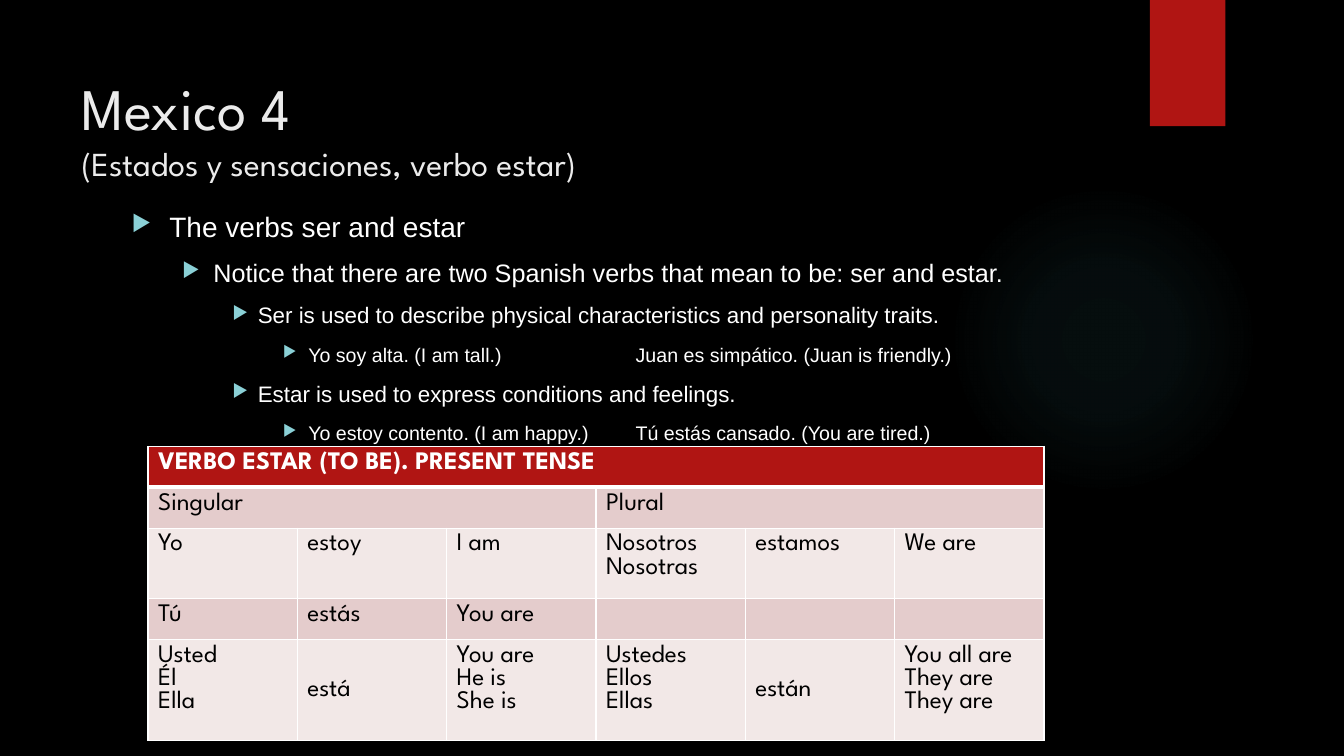
"""Build the slide about the Spanish verb estar, with its conjugation table."""
from pptx import Presentation
from pptx.dml.color import RGBColor
from pptx.enum.shapes import MSO_SHAPE
from pptx.enum.text import MSO_ANCHOR
from pptx.oxml import parse_xml
from pptx.oxml.ns import nsdecls
from pptx.util import Cm, Pt


def color(value):
    return RGBColor.from_string(value)


def add_xml(parent, tag, attributes="", content=""):
    parent.append(parse_xml(f"<a:{tag} {nsdecls('a')} {attributes}>{content}</a:{tag}>"))


presentation = Presentation()
presentation.slide_width = Cm(33.87)
presentation.slide_height = Cm(19.05)
slide = presentation.slides.add_slide(presentation.slide_layouts[6])
slide.background.fill.solid()
slide.background.fill.fore_color.rgb = color("000000")

glow = slide.shapes.add_shape(MSO_SHAPE.OVAL, Cm(23.9), Cm(4.65), Cm(7.82), Cm(7.82))
stops = "".join(
    f'<a:gs pos="{position}000"><a:srgbClr val="50B9C1"><a:alpha val="{alpha}000"/></a:srgbClr></a:gs>'
    for position, alpha in [(0, 7), (36, 6), (69, 0)]
)
center = '<a:fillToRect l="50000" t="50000" r="50000" b="50000"/>'
add_xml(glow.element.spPr, "gradFill", "", f'<a:gsLst>{stops}</a:gsLst><a:path path="circle">{center}</a:path>')

ribbon = slide.shapes.add_shape(MSO_SHAPE.RECTANGLE, Cm(28.98), 0, Cm(1.9), Cm(3.18))
ribbon.fill.solid()
ribbon.fill.fore_color.rgb = color("B01513")
for shape in (glow, ribbon):
    shape.line.fill.background()
    shape.shadow.inherit = False

title = slide.shapes.add_textbox(Cm(1.8), Cm(1.27), Cm(26.14), Cm(3.89)).text_frame
title.word_wrap = True
title.vertical_anchor = MSO_ANCHOR.MIDDLE
paragraph = title.paragraphs[0]
for text, size in [("Mexico 4", 42), ("(Estados y sensaciones, verbo estar)", 24)]:
    if paragraph.runs:
        paragraph.add_line_break()
    run = paragraph.add_run()
    run.text = text
    run.font.color.rgb = color("EBEBEB")
    for name, value in {"name": "League Spartan", "size": Pt(size)}.items():
        setattr(run.font, name, value)

levels = [
    {"margin": 0.95, "hanging": 0.95, "size": 20},
    {"margin": 2.06, "hanging": 0.79, "size": 18},
    {"margin": 3.18, "hanging": 0.64, "size": 16},
    {"margin": 4.45, "hanging": 0.64, "size": 14},
]
points = [
    (0, "The verbs ser and estar"),
    (1, "Notice that there are two Spanish verbs that mean to be: ser and estar."),
    (2, "Ser is used to describe physical characteristics and personality traits."),
    (3, "Yo soy alta. (I am tall.)\tJuan es simpático. (Juan is friendly.)"),
    (2, "Estar is used to express conditions and feelings."),
    (3, "Yo estoy contento. (I am happy.)\tTú estás cansado. (You are tired.)"),
]
body = slide.shapes.add_textbox(Cm(3.07), Cm(5.16), Cm(24.84), Cm(12.22)).text_frame
body.word_wrap = True
for index, (level, text) in enumerate(points):
    paragraph = body.add_paragraph() if index else body.paragraphs[0]
    paragraph.text = text
    paragraph.level = level
    style = levels[level]
    properties = paragraph._p.get_or_add_pPr()
    properties.set("marL", str(Cm(style["margin"])))
    properties.set("indent", str(-Cm(style["hanging"])))
    add_xml(properties, "buClr", "", '<a:srgbClr val="8AD0D6"/>')
    add_xml(properties, "buSzPct", 'val="80000"')
    add_xml(properties, "buChar", 'char="▶"')
    if "\t" in text:
        add_xml(properties, "tabLst", "", f'<a:tab pos="{Cm(12.7)}" algn="l"/>')
    paragraph.space_before = Pt(10 if index else 0)
    paragraph.font.color.rgb = color("FFFFFF")
    for name, value in {"name": "Arial", "size": Pt(style["size"])}.items():
        setattr(paragraph.font, name, value)

rows = [
    ["VERBO ESTAR (TO BE). PRESENT TENSE", "", "", "", "", ""],
    ["Singular", "", "", "Plural", "", ""],
    ["Yo", "estoy", "I am", "Nosotros\nNosotras", "estamos", "We are"],
    ["Tú", "estás", "You are", "", "", ""],
    ["Usted\nÉl\nElla", "está", "You are\nHe is\nShe is", "Ustedes\nEllos\nEllas", "están",
     "You all are\nThey are\nThey are"],
]
row_heights = [1.03, 1.03, 1.42, 1.03, 2.02]
row_fills = ["B01513", "E4CCCC", "F2E8E7", "E4CCCC", "F2E8E7"]
table = slide.shapes.add_table(5, 6, Cm(3.73), Cm(11.25), Cm(22.58), Cm(sum(row_heights))).table
for column in table.columns:
    column.width = Cm(22.58 / 6)
for row_index, texts in enumerate(rows):
    table.rows[row_index].height = Cm(row_heights[row_index])
    header = row_index == 0
    for column_index, text in enumerate(texts):
        cell = table.cell(row_index, column_index)
        cell.text = text
        for side in ("lnL", "lnR", "lnT", "lnB"):
            thick = (row_index, side) in [(0, "lnB"), (1, "lnT")]
            add_xml(cell._tc.get_or_add_tcPr(), side, f'w="{Pt(3 if thick else 1)}"',
                    '<a:solidFill><a:srgbClr val="FFFFFF"/></a:solidFill>')
        cell.fill.solid()
        cell.fill.fore_color.rgb = color(row_fills[row_index])
        if text in ("está", "están"):
            cell.vertical_anchor = MSO_ANCHOR.MIDDLE
        for paragraph in cell.text_frame.paragraphs:
            paragraph.font.color.rgb = color("FFFFFF" if header else "000000")
            for name, value in {"name": "League Spartan", "size": Pt(18), "bold": header}.items():
                setattr(paragraph.font, name, value)
for row_index, first, last in [(0, 0, 5), (1, 0, 2), (1, 3, 5)]:
    table.cell(row_index, first).merge(table.cell(row_index, last))

presentation.save("out.pptx")
